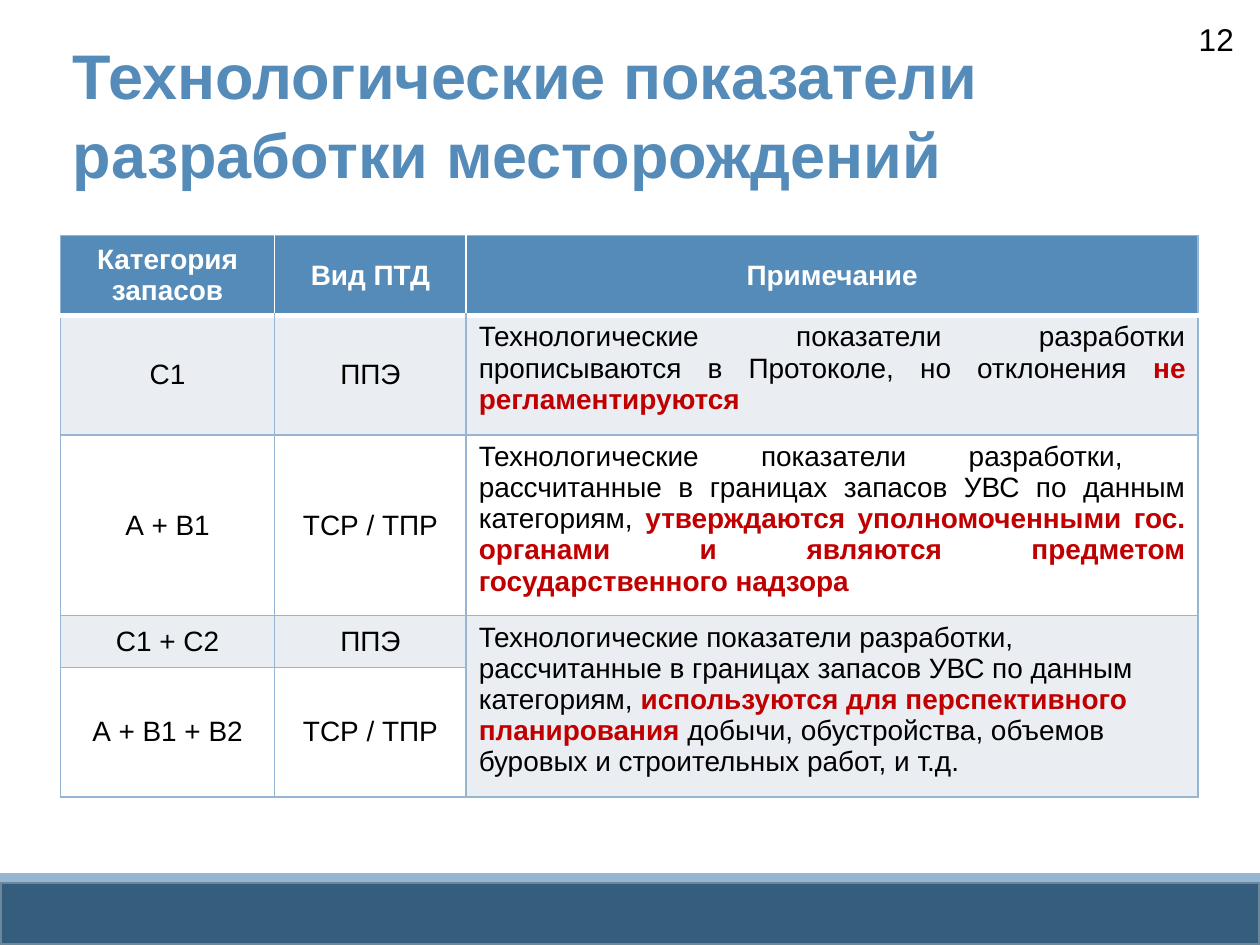
from dataclasses import dataclass

from lxml.etree import SubElement
from pptx import Presentation
from pptx.dml.color import RGBColor
from pptx.enum.shapes import MSO_SHAPE
from pptx.enum.text import MSO_ANCHOR, PP_ALIGN
from pptx.oxml.ns import qn
from pptx.util import Inches, Pt


@dataclass(frozen=True)
class Theme:
    font: str = "Arial"
    title_size: int = 36
    number_size: int = 18
    table_size: int = 16
    blue: str = "558BB8"
    light_blue: str = "94B6D2"
    navy: str = "355D7E"
    navy_edge: str = "6D879B"
    band: str = "EAEEF3"
    white: str = "FFFFFF"
    black: str = "000000"
    red: str = "C00000"


THEME = Theme()

COLUMNS = [1.7, 1.52, 5.81]
ROWS = [0.63, 0.95, 1.43, 0.41, 1.03]
HEADERS = ["Категория запасов", "Вид ПТД", "Примечание"]
CATEGORIES = [("С1", "ППЭ"), ("А + В1", "ТСР / ТПР"),
              ("С1 + С2", "ППЭ"), ("А + В1 + В2", "ТСР / ТПР")]

# Notes by table row: alignment, then (text, emphasised) pieces
NOTES = {
    1: (PP_ALIGN.JUSTIFY, [
        ("Технологические показатели разработки прописываются в Протоколе, "
         "но отклонения ", False),
        ("не регламентируются", True)]),
    2: (PP_ALIGN.JUSTIFY, [
        ("Технологические показатели разработки,  рассчитанные в границах "
         "запасов УВС по данным категориям, ", False),
        ("утверждаются уполномоченными гос. органами и являются предметом "
         "государственного надзора", True)]),
    3: (PP_ALIGN.LEFT, [
        ("Технологические показатели разработки, рассчитанные в границах "
         "запасов УВС по данным категориям, ", False),
        ("используются для перспективного планирования", True),
        (" добычи, обустройства, объемов буровых и строительных работ, "
         "и т.д.", False)]),
}


def rgb(color):
    return RGBColor.from_string(color)


def add_run(p, text, size, color, bold=False):
    r = p.add_run()
    r.text = text
    formats = {"name": THEME.font, "size": Pt(size), "bold": bold}
    for name, value in formats.items():
        setattr(r.font, name, value)
    r.font.color.rgb = rgb(color)


def add_text(s, box, text, size, color, bold=False,
             align=PP_ALIGN.LEFT, spacing=1.0):
    sp = s.shapes.add_textbox(*map(Inches, box))
    tf = sp.text_frame
    tf.word_wrap = True
    p = tf.paragraphs[0]
    p.alignment = align
    p.line_spacing = spacing
    add_run(p, text, size, color, bold)


def add_bar(s, box, fill, edge=None):
    sp = s.shapes.add_shape(MSO_SHAPE.RECTANGLE, *map(Inches, box))
    sp.shadow.inherit = False
    sp.fill.solid()
    sp.fill.fore_color.rgb = rgb(fill)
    if edge:
        sp.line.color.rgb = rgb(edge)
        sp.line.width = Pt(2)
    else:
        sp.line.fill.background()


def set_borders(cell, row, col):
    thin, white = (THEME.light_blue, 1), (THEME.white, 1)
    thick = (THEME.white, 3)
    header = row == 0
    borders = {
        "lnL": white if header and col > 0 else thin,
        "lnR": white if header and col < len(COLUMNS) - 1 else thin,
        "lnT": thick if row == 1 else thin,
        "lnB": thick if header else thin,
    }
    tc_pr = cell._tc.get_or_add_tcPr()
    for tag, (color, width) in borders.items():
        ln = SubElement(tc_pr, qn(f"a:{tag}"), w=str(Pt(width)))
        fill = SubElement(ln, qn("a:solidFill"))
        SubElement(fill, qn("a:srgbClr"), val=color)


def set_fill(cell, row):
    if row % 2 and row < len(ROWS) or row == 0:
        cell.fill.solid()
        cell.fill.fore_color.rgb = rgb(THEME.band if row else THEME.blue)
    else:
        cell.fill.background()


def fill_cell(cell, pieces, color, bold=False, align=PP_ALIGN.CENTER,
              anchor=MSO_ANCHOR.MIDDLE):
    cell.vertical_anchor = anchor
    p = cell.text_frame.paragraphs[0]
    p.alignment = align
    for text, strong in pieces:
        add_run(p, text, THEME.table_size, THEME.red if strong else color,
                bold or strong)


def add_reserves_table(s):
    frame = s.shapes.add_table(
        len(ROWS), len(COLUMNS), Inches(0.48), Inches(1.87),
        Inches(sum(COLUMNS)), Inches(sum(ROWS)))
    table = frame.table
    for column, width in zip(table.columns, COLUMNS):
        column.width = Inches(width)
    for table_row, height in zip(table.rows, ROWS):
        table_row.height = Inches(height)

    # Borders and banding
    for row in range(len(ROWS)):
        for col in range(len(COLUMNS)):
            cell = table.cell(row, col)
            set_borders(cell, row, col)
            set_fill(cell, row)
    table.cell(3, 2).merge(table.cell(4, 2))

    # Contents
    for col, text in enumerate(HEADERS):
        fill_cell(table.cell(0, col), [(text, False)], THEME.white, bold=True)
    for row, labels in enumerate(CATEGORIES, start=1):
        for col, text in enumerate(labels):
            fill_cell(table.cell(row, col), [(text, False)], THEME.black)
    for row, (align, pieces) in NOTES.items():
        fill_cell(table.cell(row, 2), pieces, THEME.black, align=align,
                  anchor=MSO_ANCHOR.TOP)


def main():
    prs = Presentation()
    prs.slide_width, prs.slide_height = Inches(10), Inches(7.5)
    s = prs.slides.add_slide(prs.slide_layouts[6])

    # Footer bars
    add_bar(s, (0, 7, 10, 0.5), THEME.navy, THEME.navy_edge)
    add_bar(s, (0, 6.93, 10, 0.07), THEME.light_blue)

    # Page number and title
    add_text(s, (8.81, 0.11, 1.08, 0.4), "12", THEME.number_size,
             THEME.black, align=PP_ALIGN.RIGHT)
    add_text(s, (0.48, 0.21, 9.03, 0.54),
             "Технологические показатели разработки месторождений",
             THEME.title_size, THEME.blue, bold=True, spacing=1.05)

    add_reserves_table(s)
    prs.save("out.pptx")


if __name__ == "__main__":
    main()
